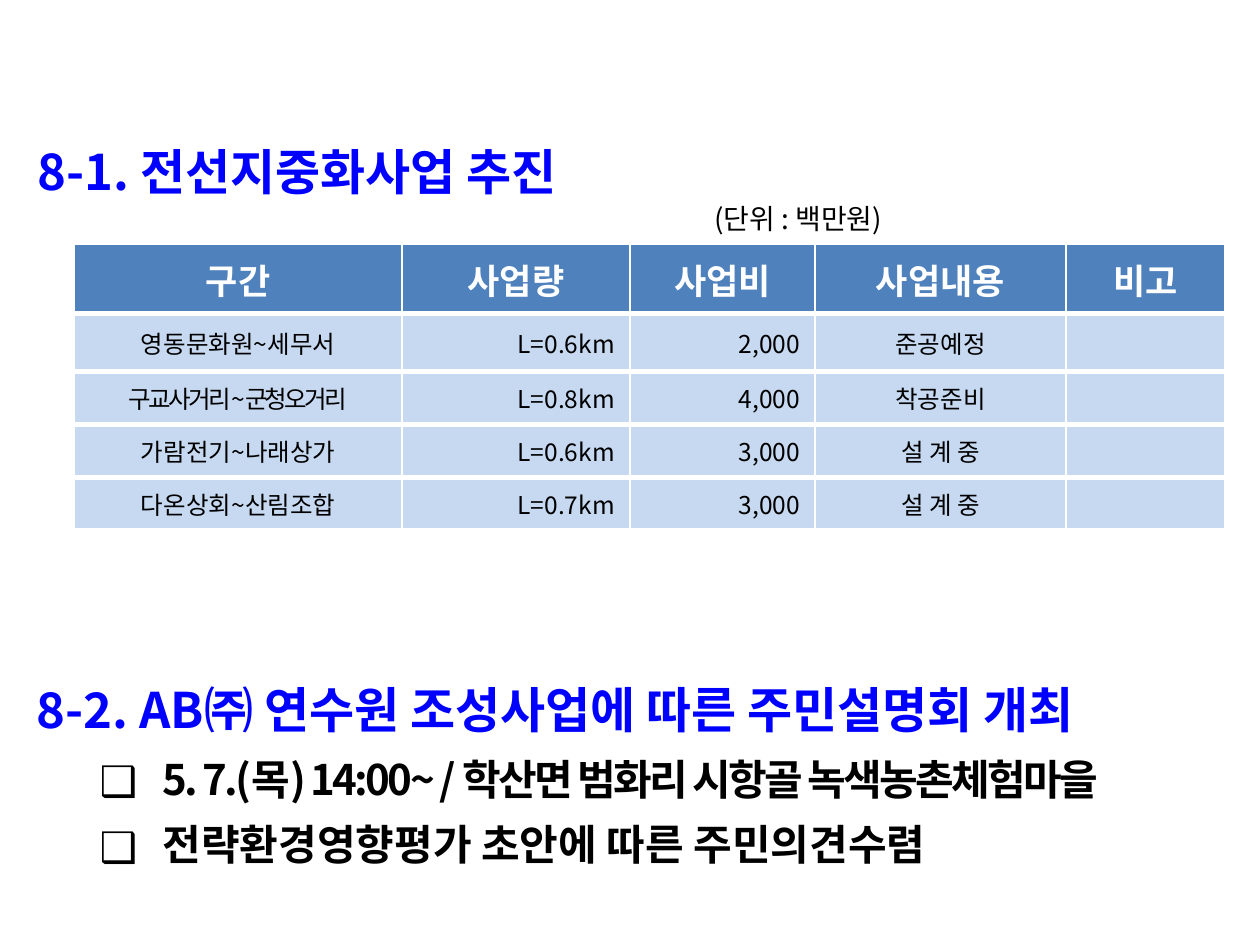
import pptx
import pptx.util
import pptx.dml.color
import pptx.enum.text
import pptx.oxml
import pptx.oxml.ns
from lxml import etree

Inches = pptx.util.Inches
Pt = pptx.util.Pt
ALIGN = pptx.enum.text.PP_ALIGN
ANCHOR = pptx.enum.text.MSO_ANCHOR
qn = pptx.oxml.ns.qn

FONT = "Noto Sans CJK KR"
HUES = {"blue": "0000FF", "black": "000000", "white": "FFFFFF",
        "head": "4F81BD", "row": "C6D9F1"}
TITLE = "8-1. 전선지중화사업 추진"
UNIT = "(단위 : 백만원)"
ROWS = [
    ("구간", "사업량", "사업비", "사업내용", "비고"),
    ("영동문화원~세무서", "L=0.6km", "2,000", "준공예정", ""),
    ("구교사거리~군청오거리", "L=0.8km", "4,000", "착공준비", ""),
    ("가람전기~나래상가", "L=0.6km", "3,000", "설 계 중", ""),
    ("다온상회~산림조합", "L=0.7km", "3,000", "설 계 중", ""),
]
WIDTHS = [2.6, 1.81, 1.47, 1.99, 1.26]
HEIGHTS = [0.55, 0.46, 0.42, 0.42, 0.42]
SIDES = [ALIGN.CENTER, ALIGN.RIGHT, ALIGN.RIGHT, ALIGN.CENTER, ALIGN.CENTER]
TIGHT = -150
LIST = [
    ("8-2. AB㈜ 연수원 조성사업에 따른 주민설명회 개최", 0, 28, "blue", 1.5, 0),
    ("5. 7.(목) 14:00~ / 학산면 범화리 시항골 녹색농촌체험마을", 1, 24, "black", 1.3, TIGHT),
    ("전략환경영향평가 초안에 따른 주민의견수렴", 1, 24, "black", 1.3, 0),
]


def color(name):
    return pptx.dml.color.RGBColor.from_string(HUES[name])


def style(para, size, hue, bold, gap=0):
    for run in para.runs:
        font = run.font
        font.name, font.size, font.bold = FONT, Pt(size), bold
        font.color.rgb = color(hue)
        props = run._r.get_or_add_rPr()
        etree.SubElement(props, qn("a:ea")).set("typeface", FONT)
        if gap:
            props.set("spc", str(gap))


def place(shape, left, top, width, height):
    shape.left, shape.top = Inches(left), Inches(top)
    shape.width, shape.height = Inches(width), Inches(height)
    frame = shape.text_frame
    frame.word_wrap = True
    frame.auto_size = pptx.enum.text.MSO_AUTO_SIZE.NONE
    frame.vertical_anchor = ANCHOR.TOP
    return frame


def border(cell, top):
    props = cell._tc.get_or_add_tcPr()
    for tag, width in (("lnL", 1), ("lnR", 1), ("lnT", top), ("lnB", 3)):
        line = etree.SubElement(props, qn("a:" + tag), w=str(Pt(width)))
        fill = etree.SubElement(line, qn("a:solidFill"))
        etree.SubElement(fill, qn("a:srgbClr"), val=HUES["white"])


def bullet(para, level):
    props = para._p.get_or_add_pPr()
    if level:
        props.set("marL", str(Inches(1)))
        props.set("indent", str(Inches(-0.5)))
        hue = etree.SubElement(props, qn("a:buClr"))
        etree.SubElement(hue, qn("a:srgbClr"), val=HUES["black"])
        etree.SubElement(props, qn("a:buFont"), typeface=FONT)
        etree.SubElement(props, qn("a:buChar"), char="❑")
    else:
        props.set("marL", str(Inches(0.58)))
        props.set("indent", str(Inches(-0.58)))
        etree.SubElement(props, qn("a:buNone"))


def main():
    deck = pptx.Presentation()
    deck.slide_width, deck.slide_height = Inches(10), Inches(7.5)
    slide = deck.slides.add_slide(deck.slide_layouts[1])

    frame = place(slide.shapes.title, 0.2, 1.07, 9.5, 0.6)
    frame.text = TITLE
    para = frame.paragraphs[0]
    para.alignment = ALIGN.LEFT
    style(para, 28, "blue", True)

    frame = place(slide.shapes.add_textbox(0, 0, 0, 0), 4.9, 1.55, 2.2, 0.4)
    frame.text = UNIT
    para = frame.paragraphs[0]
    para.alignment = ALIGN.RIGHT
    style(para, 16, "black", False)

    table = slide.shapes.add_table(
        len(ROWS), len(WIDTHS), Inches(0.59), Inches(1.94),
        Inches(sum(WIDTHS)), Inches(sum(HEIGHTS))).table
    for col, width in zip(table.columns, WIDTHS):
        col.width = Inches(width)
    for r, (row, height) in enumerate(zip(ROWS, HEIGHTS)):
        table.rows[r].height = Inches(height)
        for c, text in enumerate(row):
            cell = table.cell(r, c)
            border(cell, 3 if r else 1)
            cell.fill.solid()
            cell.fill.fore_color.rgb = color("row" if r else "head")
            cell.vertical_anchor = ANCHOR.MIDDLE
            cell.margin_left = cell.margin_right = Inches(0.12 if r else 0.1)
            cell.text = text
            para = cell.text_frame.paragraphs[0]
            para.alignment = SIDES[c] if r else ALIGN.CENTER
            if r:
                style(para, 14, "black", False, TIGHT if (r, c) == (2, 0) else 0)
            else:
                style(para, 20, "white", True)

    frame = place(slide.placeholders[1], 0.19, 5.11, 9.53, 1.79)
    frame.text = "\n".join(item[0] for item in LIST)
    for para, (_, level, size, hue, space, gap) in zip(frame.paragraphs, LIST):
        para.level = level
        para.line_spacing = space
        para.space_before = Pt(0)
        bullet(para, level)
        style(para, size, hue, True, gap)

    deck.save("out.pptx")


if __name__ == "__main__":
    main()
